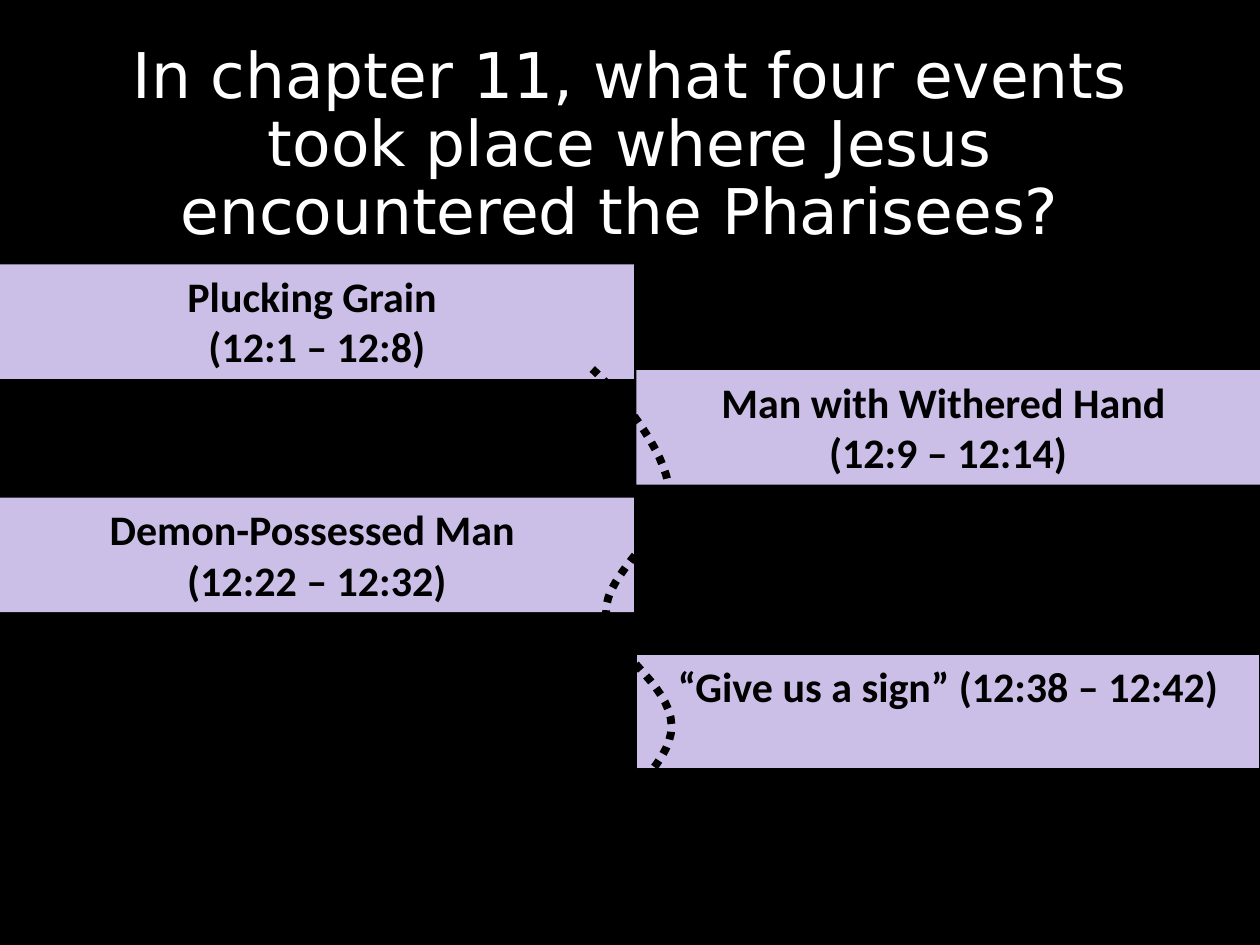
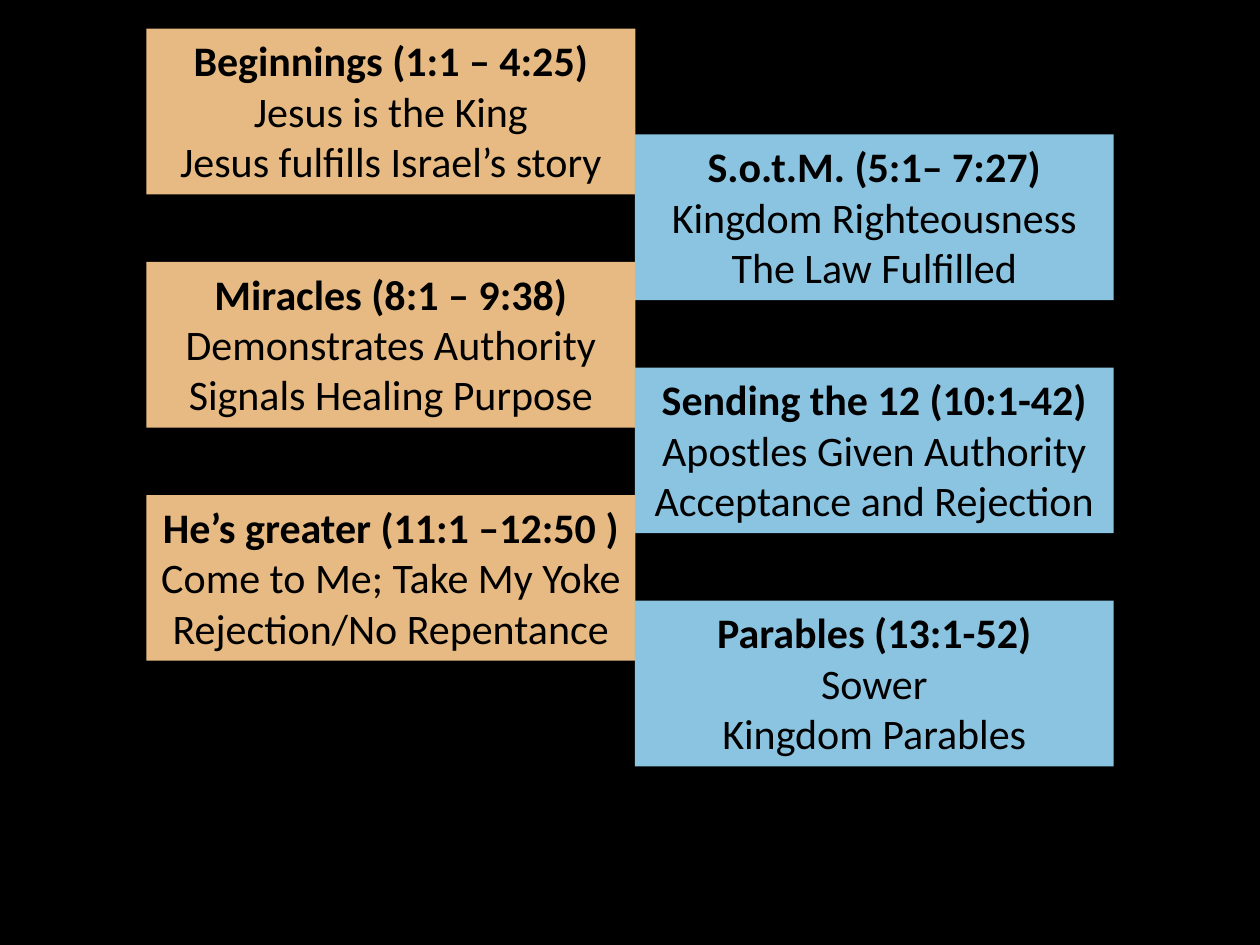
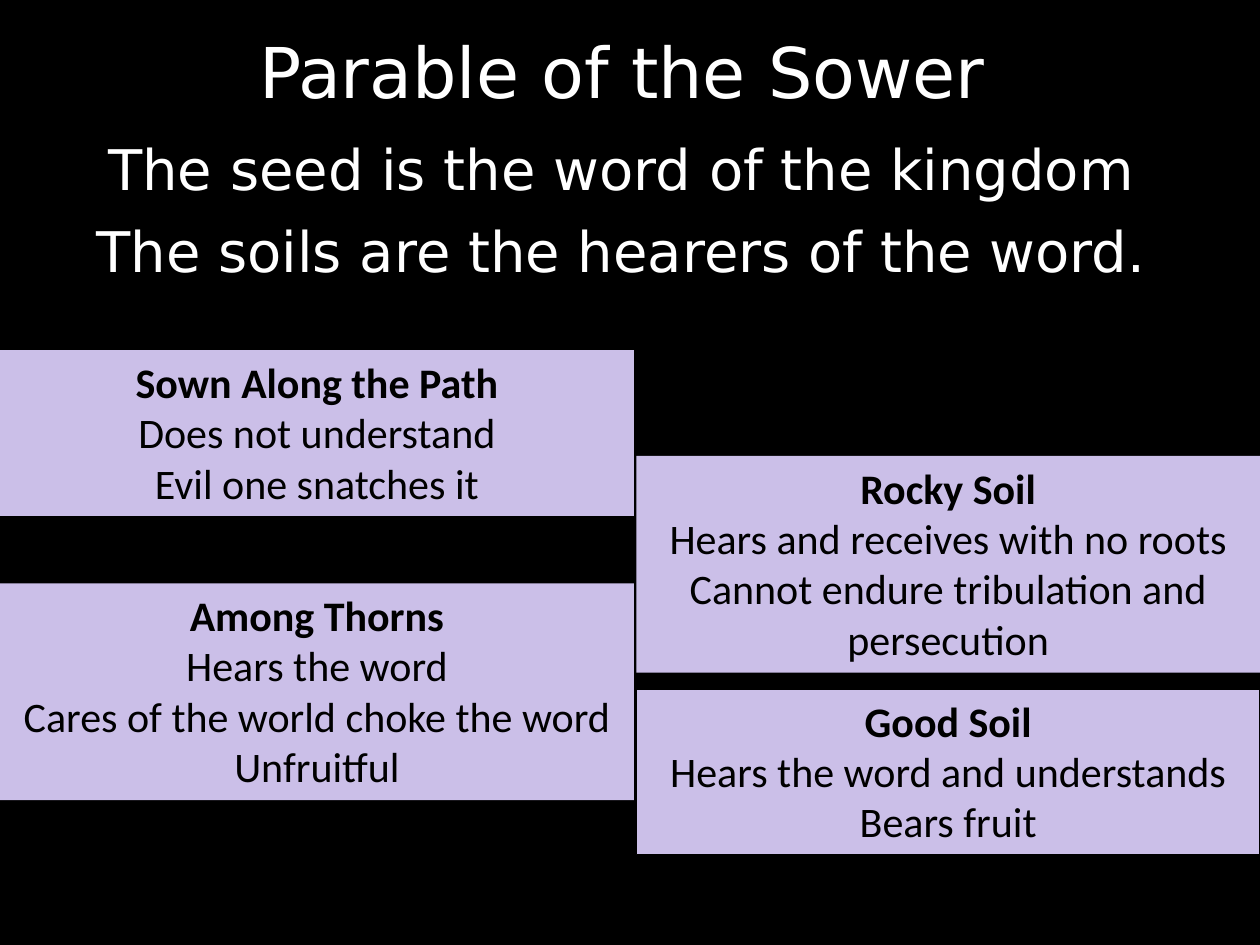
from dataclasses import dataclass

from pptx import Presentation
from pptx.dml.color import RGBColor
from pptx.enum.dml import MSO_LINE
from pptx.enum.shapes import MSO_SHAPE
from pptx.enum.text import MSO_ANCHOR, MSO_AUTO_SIZE, PP_ALIGN
from pptx.util import Cm, Pt

BLACK, WHITE = "000000", "FFFFFF"
LILAC, ORANGE, BLUE = "CBBFE8", "E6BA82", "8BC4E0"
TITLE_FONT, BLOCK_FONT = "DejaVu Sans", "Calibri"
TITLE_ONLY, BLANK = 5, 6

# All block sizes and positions are in centimetres.
LINE_HEIGHT, BLOCK_PADDING = 1.03, 0.25
ROW_STEP, COLUMN_DROP = 4.7, 2.13


@dataclass
class Column:
    left: float
    width: float
    color: str


@dataclass
class Block:
    lines: list
    line_count: int = 3
    bold_lines: int = 1
    extra_drop: float = 0
    outlined: bool = False


FULL_WIDTH = (Column(0, 12.78, LILAC), Column(12.83, 12.57, LILAC))
CENTERED = (Column(2.95, 9.86, ORANGE), Column(12.8, 9.65, BLUE))


def rgb(hex_color):
    return RGBColor.from_string(hex_color)


def add_text(paragraph, text, font, size, color, bold=False):
    paragraph.alignment = PP_ALIGN.CENTER
    run = paragraph.add_run()
    run.text = text
    run.font.name = font
    run.font.size = Pt(size)
    run.font.bold = bold
    run.font.color.rgb = rgb(color)


def add_paragraph(frame, index):
    """Return the first paragraph of the frame, or a new one after it."""
    return frame.add_paragraph() if index else frame.paragraphs[0]


def set_title(slide, box, lines, anchor):
    """Fill the title with lines of (text, size, space before)."""
    title = slide.shapes.title
    title.left, title.top, title.width, title.height = map(Cm, box)
    frame = title.text_frame
    frame.word_wrap = True
    frame.auto_size = MSO_AUTO_SIZE.NONE
    frame.vertical_anchor = anchor
    for index, (text, size, space_before) in enumerate(lines):
        paragraph = add_paragraph(frame, index)
        paragraph.line_spacing = 0.9
        paragraph.space_before = Pt(space_before)
        add_text(paragraph, text, TITLE_FONT, size, WHITE)


def add_block(slide, column, top, block):
    height = BLOCK_PADDING + block.line_count * LINE_HEIGHT
    shape = slide.shapes.add_shape(
        MSO_SHAPE.RECTANGLE, Cm(column.left), Cm(top), Cm(column.width), Cm(height))
    shape.shadow.inherit = False
    shape.fill.solid()
    shape.fill.fore_color.rgb = rgb(column.color)
    if block.outlined:
        shape.line.color.rgb = rgb(BLACK)
        shape.line.width = Pt(0.75)
    else:
        shape.line.fill.background()
    frame = shape.text_frame
    frame.word_wrap = True
    frame.vertical_anchor = MSO_ANCHOR.TOP
    for index, text in enumerate(block.lines):
        add_text(add_paragraph(frame, index), text, BLOCK_FONT, 24, BLACK,
                 bold=index < block.bold_lines)


def add_staircase(slide, columns, top, blocks):
    """Place blocks in reading order, the right column lower than the left."""
    for index, block in enumerate(blocks):
        row, side = divmod(index, 2)
        block_top = top + row * ROW_STEP + side * COLUMN_DROP + block.extra_drop
        add_block(slide, columns[side], block_top, block)


def bezier_points(start, control_1, control_2, end, steps=16):
    for step in range(1, steps + 1):
        t = step / steps
        weights = ((1 - t) ** 3, 3 * t * (1 - t) ** 2, 3 * t ** 2 * (1 - t), t ** 3)
        yield tuple(
            Cm(sum(weight * value for weight, value in zip(weights, axis)))
            for axis in zip(start, control_1, control_2, end))


def add_winding_path(slide, left, top):
    curves = [
        ((0.53, 0.48), (1.5, 1.65), (1.55, 2.46)),
        ((1.57, 3.28), (0.25, 4.11), (0.28, 4.9)),
        ((0.28, 5.69), (1.57, 6.3), (1.6, 7.19)),
        ((1.6, 8.05), (0.33, 8.76), (0.28, 9.4)),
    ]
    builder = slide.shapes.build_freeform(0, 0)
    start = (0, 0)
    for control_1, control_2, end in curves:
        builder.add_line_segments(
            list(bezier_points(start, control_1, control_2, end)), close=False)
        start = end
    path = builder.convert_to_shape(Cm(left), Cm(top))
    path.shadow.inherit = False
    path.fill.background()
    path.line.color.rgb = rgb(BLACK)
    path.line.width = Pt(4.5)
    path.line.dash_style = MSO_LINE.ROUND_DOT


def add_slide(presentation, layout):
    return presentation.slides.add_slide(presentation.slide_layouts[layout])


def build_pharisees_slide(presentation):
    slide = add_slide(presentation, TITLE_ONLY)
    question = ("In chapter 11, what four events took place where Jesus "
                "encountered the Pharisees? ")
    set_title(slide, (1.75, 1.04, 21.9, 3.81), [(question, 36, 0)], MSO_ANCHOR.MIDDLE)
    add_staircase(slide, FULL_WIDTH, 5.33, [
        Block(["Plucking Grain ", "(12:1 – 12:8)"], 2, 2),
        Block(["Man with Withered Hand ", "(12:9 – 12:14)"], 2, 2),
        Block(["Demon-Possessed Man ", "(12:22 – 12:32)"], 2, 2),
        Block(["“Give us a sign” (12:38 – 12:42)"], 2,
              extra_drop=LINE_HEIGHT, outlined=True),
    ])
    add_winding_path(slide, 11.94, 7.44)


def build_outline_slide(presentation):
    slide = add_slide(presentation, BLANK)
    add_staircase(slide, CENTERED, 0.58, [
        Block(["Beginnings (1:1 – 4:25)", "Jesus is the King",
               "Jesus fulfills Israel’s story"]),
        Block(["S.o.t.M. (5:1– 7:27)", "Kingdom Righteousness", "The Law Fulfilled"]),
        Block(["Miracles (8:1 – 9:38)", "Demonstrates Authority",
               "Signals Healing Purpose"]),
        Block(["Sending the 12 (10:1-42)", "Apostles Given Authority",
               "Acceptance and Rejection"]),
        Block(["He’s greater (11:1 –12:50 )", "Come to Me; Take My Yoke",
               "Rejection/No Repentance"]),
        Block(["Parables (13:1-52)", "Sower", "Kingdom Parables"]),
    ])


def build_sower_slide(presentation):
    slide = add_slide(presentation, TITLE_ONLY)
    set_title(slide, (1.12, 0.64, 22.83, 9.67), [
        ("Parable of the Sower", 40, 0),
        ("The seed is the word of the kingdom", 32, 16.5),
        ("The soils are the hearers of the word.", 32, 12),
    ], MSO_ANCHOR.TOP)
    add_staircase(slide, FULL_WIDTH, 7.06, [
        Block(["Sown Along the Path", "Does not understand", "Evil one snatches it"]),
        Block(["Rocky Soil", "Hears and receives with no roots",
               "Cannot endure tribulation and persecution"], 4),
        Block(["Among Thorns", "Hears the word", "Cares of the world choke the word",
               "Unfruitful"], 4),
        Block(["Good Soil", "Hears the word and understands", "Bears fruit"],
              outlined=True),
    ])


def main():
    presentation = Presentation()
    presentation.slide_width, presentation.slide_height = Cm(25.4), Cm(19.05)
    background = presentation.slide_master.background.fill
    background.solid()
    background.fore_color.rgb = rgb(BLACK)
    build_pharisees_slide(presentation)
    build_outline_slide(presentation)
    build_sower_slide(presentation)
    presentation.save("out.pptx")


if __name__ == "__main__":
    main()
